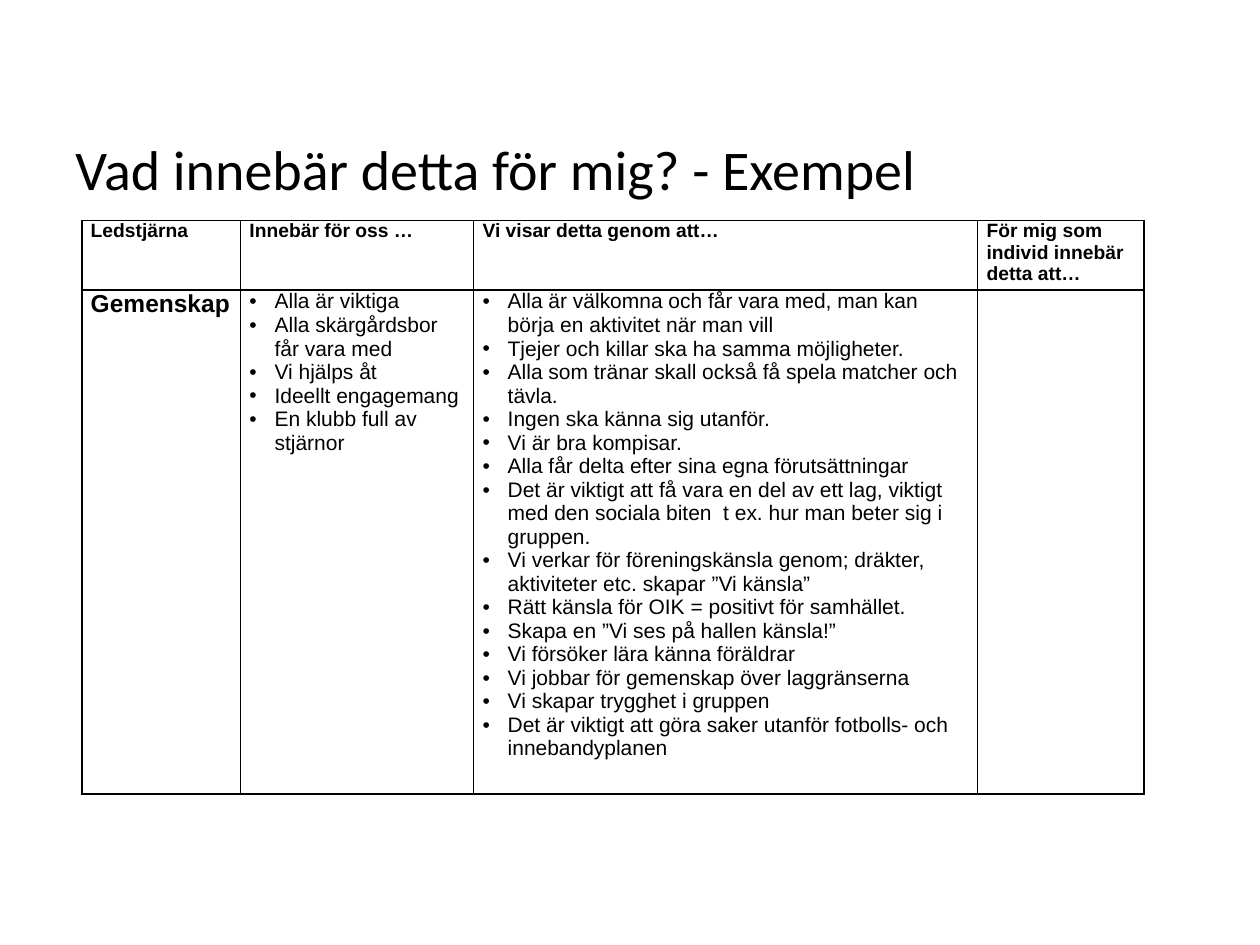
import pptx
import pptx.util
import pptx.dml.color
import pptx.enum.text
from pptx.util import Inches
from lxml import etree

COLORS = {"text": "000000", "border": "000000"}
HEADINGS = ["Ledstjärna", "Innebär för oss …", "Vi visar detta genom att…",
            "För mig som individ innebär detta att…"]
GUIDING_STAR = "Gemenskap"
MEANINGS = [
    "Alla är viktiga",
    "Alla skärgårdsbor får vara med",
    "Vi hjälps åt",
    "Ideellt engagemang",
    "En klubb full av stjärnor",
]
ACTIONS = [
    "Alla är välkomna och får vara med, man kan börja en aktivitet när man vill",
    "Tjejer och killar ska ha samma möjligheter.",
    "Alla som tränar skall också få spela matcher och tävla.",
    "Ingen ska känna sig utanför.",
    "Vi är bra kompisar.",
    "Alla får delta efter sina egna förutsättningar",
    "Det är viktigt att få vara en del av ett lag, viktigt med den sociala biten  t ex. hur man beter sig i gruppen.",
    "Vi verkar för föreningskänsla genom; dräkter, aktiviteter etc. skapar ”Vi känsla”",
    "Rätt känsla för OIK = positivt för samhället.",
    "Skapa en ”Vi ses på hallen känsla!”",
    "Vi försöker lära känna föräldrar",
    "Vi jobbar för gemenskap över laggränserna",
    "Vi skapar trygghet i gruppen",
    "Det är viktigt att göra saker utanför fotbolls- och innebandyplanen",
]
COLUMN_WIDTHS = [1.26, 1.85, 4, 1.32]
ROW_HEIGHTS = [0.51, 3.92]


def add_element(parent, tag, **attributes):
    return etree.SubElement(parent, pptx.oxml.ns.qn(tag), attributes)


def style_font(paragraph, name, size, bold=False):
    paragraph.font.name = name
    paragraph.font.size = pptx.util.Pt(size)
    paragraph.font.bold = bold
    paragraph.font.color.rgb = pptx.dml.color.RGBColor.from_string(COLORS["text"])


def style_cell(cell):
    cell.margin_left = cell.margin_right = Inches(0.07)
    cell.margin_top = cell.margin_bottom = 0
    properties = cell._tc.get_or_add_tcPr()
    for side in ("a:lnL", "a:lnR", "a:lnT", "a:lnB"):
        line = add_element(properties, side, w=str(pptx.util.Pt(1)))
        fill = add_element(line, "a:solidFill")
        add_element(fill, "a:srgbClr", val=COLORS["border"])
    cell.fill.background()


def write_cell(cell, lines, size, bold=False, bulleted=False):
    for index, line in enumerate(lines):
        frame = cell.text_frame
        paragraph = frame.add_paragraph() if index else frame.paragraphs[0]
        paragraph.text = line
        if bulleted:
            properties = paragraph._p.get_or_add_pPr()
            properties.set("marL", str(Inches(0.2)))
            properties.set("indent", str(Inches(-0.2)))
            add_element(properties, "a:buFont", typeface="Arial")
            add_element(properties, "a:buChar", char="•")
        style_font(paragraph, "Arial", size, bold)


def add_title(slide, left, top, width, height):
    title = slide.shapes.add_textbox(left, top, width, height).text_frame
    title.word_wrap = True
    title.vertical_anchor = pptx.enum.text.MSO_ANCHOR.MIDDLE
    title.paragraphs[0].text = "Vad innebär detta för mig? - Exempel"
    style_font(title.paragraphs[0], "Calibri", 32)


def add_values_table(slide, left, top, width, height):
    table = slide.shapes.add_table(2, len(HEADINGS), left, top, width, height).table
    table.horz_banding = False
    for column, column_width in zip(table.columns, COLUMN_WIDTHS):
        column.width = Inches(column_width)
    for row, row_height in zip(table.rows, ROW_HEIGHTS):
        row.height = Inches(row_height)
    for cell in table.iter_cells():
        style_cell(cell)
    for column, heading in enumerate(HEADINGS):
        write_cell(table.cell(0, column), [heading], 11, bold=True)
    write_cell(table.cell(1, 0), [GUIDING_STAR], 14, bold=True)
    write_cell(table.cell(1, 1), MEANINGS, 12, bulleted=True)
    write_cell(table.cell(1, 2), ACTIONS, 12, bulleted=True)


def main():
    presentation = pptx.Presentation()
    presentation.slide_width = Inches(10)
    presentation.slide_height = Inches(7.5)
    slide = presentation.slides.add_slide(presentation.slide_layouts[6])
    add_title(slide, Inches(0.5), Inches(0.92), Inches(9), Inches(0.83))
    add_values_table(slide, Inches(0.65), Inches(1.75),
                     Inches(sum(COLUMN_WIDTHS)), Inches(sum(ROW_HEIGHTS)))
    presentation.save("out.pptx")


if __name__ == "__main__":
    main()
